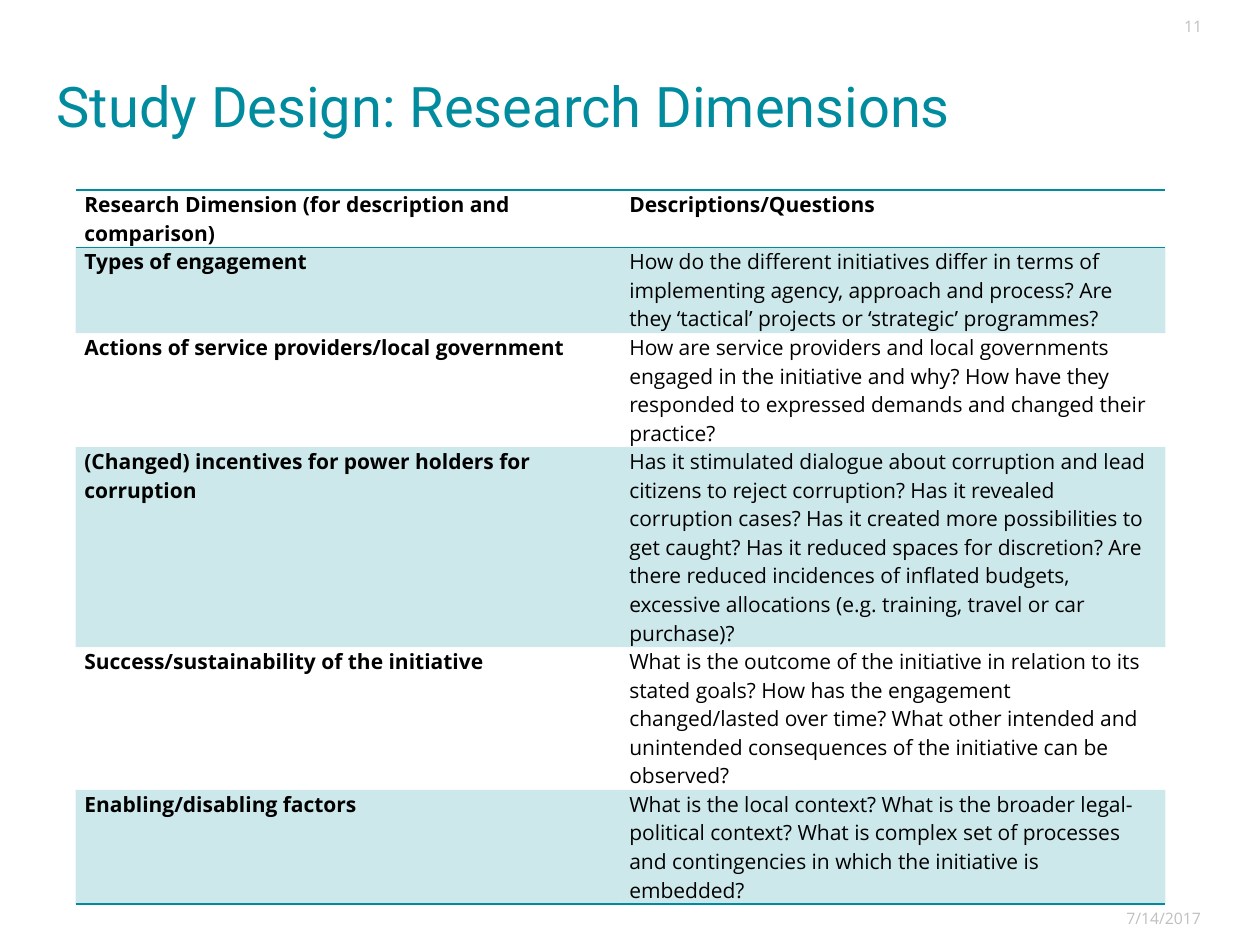
from dataclasses import dataclass

from lxml.etree import SubElement
from pptx import Presentation
from pptx.dml.color import RGBColor
from pptx.enum.text import MSO_ANCHOR, PP_ALIGN
from pptx.oxml.ns import qn
from pptx.util import Inches, Pt


@dataclass(frozen=True)
class Theme:
    teal: str = "008C9E"
    black: str = "000000"
    gray: str = "BFBFBF"
    head: str = "Roboto"
    body: str = "Open Sans"
    title: int = 32
    text: int = 12
    small: int = 9
    tint: int = 20  # percent opacity of shaded rows


THEME = Theme()
LINE = THEME.text * 1.36 / 72  # inches of row height for each line of text

# Left text, right text, lines of text in the row
ROWS = [
    ("Research Dimension (for description and comparison)",
     "Descriptions/Questions", 2),
    ("Types of engagement",
     "How do the different initiatives differ in terms of implementing agency, "
     "approach and process? Are they ‘tactical’ projects or ‘strategic’ "
     "programmes?", 3),
    ("Actions of service providers/local government",
     "How are service providers and local governments engaged in the initiative "
     "and why? How have they responded to expressed demands and changed their "
     "practice?", 4),
    ("(Changed) incentives for power holders for corruption",
     "Has it stimulated dialogue about corruption and lead citizens to reject "
     "corruption? Has it revealed corruption cases? Has it created more "
     "possibilities to get caught? Has it reduced spaces for discretion? Are "
     "there reduced incidences of inflated budgets, excessive allocations (e.g. "
     "training, travel or car purchase)?", 7),
    ("Success/sustainability of the initiative",
     "What is the outcome of the initiative in relation to its stated goals? How "
     "has the engagement changed/lasted over time? What other intended and "
     "unintended consequences of the initiative can be observed?", 5),
    ("Enabling/disabling factors",
     "What is the local context? What is the broader legal-political context? "
     "What is complex set of processes and contingencies in which the initiative "
     "is embedded?", 4),
]


def add_run(para, text, font, size, color, bold=False):
    run = para.add_run()
    run.text = text
    run.font.name = font
    run.font.size = Pt(size)
    run.font.bold = bold
    run.font.color.rgb = RGBColor.from_string(color)


def place_title(slide, box, text):
    title = slide.shapes.title
    title.left, title.top, title.width, title.height = map(Inches, box)
    frame = title.text_frame
    frame.vertical_anchor = MSO_ANCHOR.MIDDLE
    para = frame.paragraphs[0]
    para.alignment = PP_ALIGN.LEFT
    add_run(para, text, THEME.head, THEME.title, THEME.teal)


def add_note(slide, box, text):
    """Add a small gray label, set to the right of its box."""
    frame = slide.shapes.add_textbox(*map(Inches, box)).text_frame
    frame.word_wrap = True
    frame.vertical_anchor = MSO_ANCHOR.MIDDLE
    para = frame.paragraphs[0]
    para.alignment = PP_ALIGN.RIGHT
    add_run(para, text, THEME.body, THEME.small, THEME.gray)


def set_edges(cell, ruled):
    """Rule the sides named in ruled and clear the others."""
    props = cell._tc.get_or_add_tcPr()
    for side in "LRTB":
        edge = SubElement(props, qn(f"a:ln{side}"), w=str(Pt(1)))
        if side in ruled:
            fill = SubElement(edge, qn("a:solidFill"))
            SubElement(fill, qn("a:srgbClr"), val=THEME.teal)
        else:
            SubElement(edge, qn("a:noFill"))


def set_fill(cell, shaded):
    if not shaded:
        cell.fill.background()
        return
    cell.fill.solid()
    cell.fill.fore_color.rgb = RGBColor.from_string(THEME.teal)
    color = cell._tc.tcPr.find(qn("a:solidFill")).find(qn("a:srgbClr"))
    SubElement(color, qn("a:alpha"), val=str(THEME.tint * 1000))


def fill_cell(cell, text, bold, ruled, shaded):
    cell.margin_left = cell.margin_right = Inches(0.07)
    cell.margin_top = cell.margin_bottom = 0
    set_edges(cell, ruled)
    set_fill(cell, shaded)
    para = cell.text_frame.paragraphs[0]
    add_run(para, text, THEME.body, THEME.text, THEME.black, bold)


def add_grid(slide, box, rows):
    left, top, width = box
    height = LINE * sum(lines for *_, lines in rows)
    frame = slide.shapes.add_table(
        len(rows), 2, *map(Inches, (left, top, width, height)))
    table = frame.table
    table.first_row = table.horz_banding = False
    for col in table.columns:
        col.width = Inches(width / 2)
    last = len(rows) - 1
    edges = {0: "TB", 1: "T", last: "B"}
    for i, (*texts, lines) in enumerate(rows):
        table.rows[i].height = Inches(LINE * lines)
        for j, text in enumerate(texts):
            bold = i == 0 or j == 0
            fill_cell(table.cell(i, j), text, bold, edges.get(i, ""), i % 2 == 1)


def main():
    deck = Presentation()
    deck.slide_width, deck.slide_height = Inches(10), Inches(7.5)
    slide = deck.slides.add_slide(deck.slide_layouts[5])
    place_title(slide, (0.35, 0.35, 9.29, 0.97),
                "Study Design: Research Dimensions")
    add_note(slide, (6.6, 7.13, 3.03, 0.31), "7/14/2017")
    add_note(slide, (7.71, 0.05, 1.93, 0.31), "11")
    add_grid(slide, (0.6, 1.51, 8.65), ROWS)
    deck.save("out.pptx")


if __name__ == "__main__":
    main()
